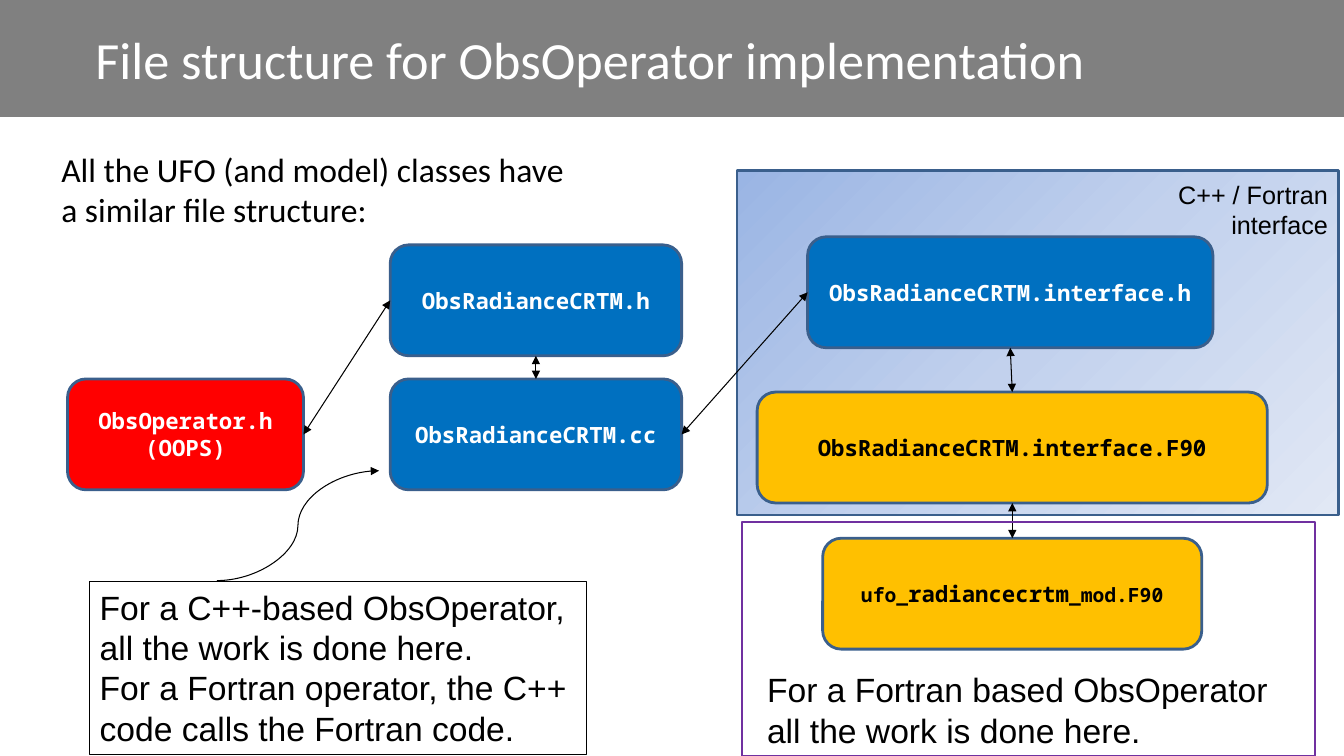
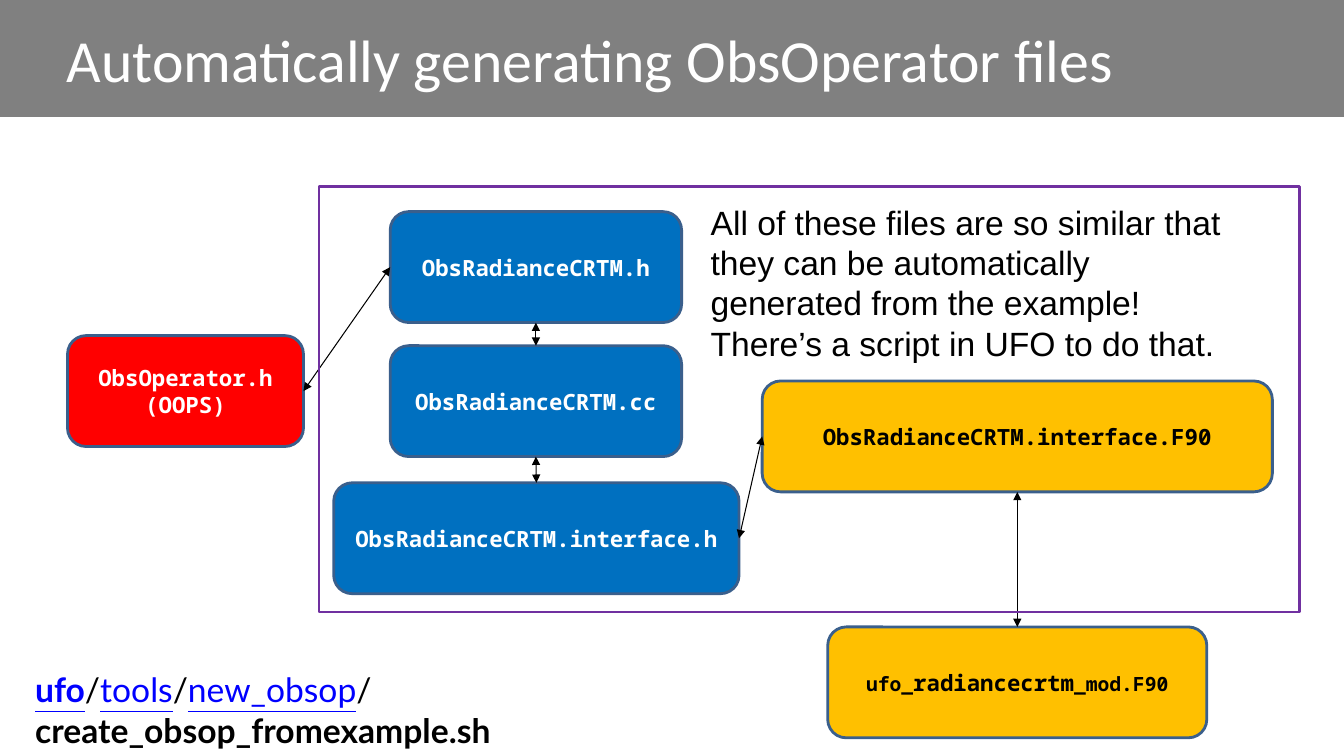
import copy
import dataclasses
import typing

import pptx
import pptx.dml.color
import pptx.enum.shapes
import pptx.enum.text
import pptx.oxml.ns
import pptx.slide
import pptx.util
from pptx.util import Inches

Align = pptx.enum.text.PP_ALIGN
Anchor = pptx.enum.text.MSO_ANCHOR
Preset = pptx.enum.shapes.MSO_SHAPE
Connector = pptx.enum.shapes.MSO_CONNECTOR
TOP, LEFT, BOTTOM, RIGHT = range(4)


@dataclasses.dataclass(frozen=True)
class Theme:
    band: str = "808080"
    white: str = "FFFFFF"
    black: str = "000000"
    blue: str = "0070C0"
    amber: str = "FFC000"
    red: str = "FF0000"
    outline: str = "3A5F8C"
    frame: str = "7030A0"
    link: str = "0000FF"
    panel: tuple[str, ...] = ("9AB5E4", "C2D1ED", "E1E8F5")
    title_font: str = "Calibri"
    code_font: str = "Noto Sans Mono"
    note_font: str = "Arial"
    path_font: str = "Lato"
    note_size: float = 24
    label_size: float = 18
    code_size: float = 16
    small_code_size: float = 14
    box_line: float = 2
    frame_line: float = 1.5
    thin_line: float = 0.75


THEME = Theme()


@dataclasses.dataclass(frozen=True)
class Run:
    text: str
    size: float = THEME.note_size
    font: str = THEME.note_font
    color: str = THEME.black
    bold: bool = False
    underline: bool = False


Paragraphs = tuple[tuple[Run, ...], ...]


@dataclasses.dataclass(frozen=True)
class Area:
    left: float
    top: float
    width: float
    height: float

    def lengths(self) -> tuple[int, ...]:
        return tuple(Inches(value) for value in dataclasses.astuple(self))


@dataclasses.dataclass(frozen=True)
class FileKind:
    paragraphs: Paragraphs
    width: float
    fill: str


@dataclasses.dataclass(frozen=True)
class FileBox:
    kind: str
    left: float
    top: float


@dataclasses.dataclass(frozen=True)
class Link:
    start: str
    start_side: int
    end: str
    end_side: int


def code(text: str, color: str = THEME.white, size: float = THEME.code_size) -> Run:
    return Run(text, size, THEME.code_font, color, bold=True)


def path_part(text: str, bold: bool = False, linked: bool = False) -> Run:
    color = THEME.link if linked else THEME.black
    return Run(text, font=THEME.path_font, color=color, bold=bold, underline=linked)


BOX_HEIGHT = 1.1
FILE_KINDS = {
    "operator": FileKind(((code("ObsOperator.h"),), (code("(OOPS)"),)), 2.34, THEME.red),
    "header": FileKind(((code("ObsRadianceCRTM.h"),),), 2.89, THEME.blue),
    "source": FileKind(((code("ObsRadianceCRTM.cc"),),), 2.89, THEME.blue),
    "interface_header": FileKind(((code("ObsRadianceCRTM.interface.h"),),), 4.02, THEME.blue),
    "interface_fortran": FileKind(
        ((code("ObsRadianceCRTM.interface.F90", THEME.black),),), 5.06, THEME.amber),
    "module": FileKind(
        ((code("ufo_", THEME.black, THEME.small_code_size),
          code("radiancecrtm", THEME.black),
          code("_mod.F90", THEME.black, THEME.small_code_size)),), 3.76, THEME.amber),
}
SHARED_LINKS = (
    Link("header", LEFT, "operator", RIGHT),
    Link("header", BOTTOM, "source", TOP),
    Link("interface_fortran", BOTTOM, "module", TOP),
)


def rgb(color: str) -> pptx.dml.color.RGBColor:
    return pptx.dml.color.RGBColor.from_string(color)


def write_text(shape: typing.Any, paragraphs: Paragraphs, align: Align = Align.LEFT,
               anchor: Anchor = Anchor.TOP, wrap: bool = True) -> None:
    frame = shape.text_frame
    frame.word_wrap = wrap
    frame.vertical_anchor = anchor
    for index, parts in enumerate(paragraphs):
        paragraph = frame.add_paragraph() if index else frame.paragraphs[0]
        paragraph.alignment = align
        for part in parts:
            if part.text == "\n":
                paragraph.add_line_break()
                continue
            run = paragraph.add_run()
            run.text = part.text
            run.font.color.rgb = rgb(part.color)
            values = {"name": part.font, "size": pptx.util.Pt(part.size),
                      "bold": part.bold, "underline": part.underline}
            for name, value in values.items():
                setattr(run.font, name, value)


def add_text(slide: pptx.slide.Slide, area: Area, paragraphs: Paragraphs,
             align: Align = Align.LEFT, anchor: Anchor = Anchor.TOP,
             wrap: bool = True) -> None:
    write_text(slide.shapes.add_textbox(*area.lengths()), paragraphs, align, anchor, wrap)


def add_box(slide: pptx.slide.Slide, preset: Preset, area: Area, fill: str | None = None,
            line: str | None = None, line_width: float = THEME.box_line) -> typing.Any:
    """Add a preset shape; without a colour, its fill or line stays empty."""
    shape = slide.shapes.add_shape(preset, *area.lengths())
    shape.shadow.inherit = False
    if fill:
        shape.fill.solid()
        shape.fill.fore_color.rgb = rgb(fill)
    else:
        shape.fill.background()
    if line:
        shape.line.color.rgb = rgb(line)
        shape.line.width = pptx.util.Pt(line_width)
    else:
        shape.line.fill.background()
    return shape


def add_gradient_panel(slide: pptx.slide.Slide, area: Area) -> None:
    panel = add_box(slide, Preset.RECTANGLE, area, line=THEME.outline)
    panel.fill.gradient()
    panel.fill.gradient_angle = 315
    stops = panel.element.spPr.find(".//" + pptx.oxml.ns.qn("a:gsLst"))
    stops.insert(1, copy.deepcopy(stops[0]))
    for index, (stop, color) in enumerate(zip(panel.fill.gradient_stops, THEME.panel)):
        stop.position = index / (len(THEME.panel) - 1)
        stop.color.rgb = rgb(color)


def add_arrow(slide: pptx.slide.Slide, kind: Connector, ends: tuple[str, ...],
              points: tuple[float, ...] = (0, 0, 0, 0)) -> typing.Any:
    """Add a thin connector with a triangle at each named end."""
    arrow = slide.shapes.add_connector(kind, *(Inches(value) for value in points))
    arrow.line.color.rgb = rgb(THEME.black)
    arrow.line.width = pptx.util.Pt(THEME.thin_line)
    line = arrow.line._get_or_add_ln()
    for end in ends:
        mark = line.makeelement(pptx.oxml.ns.qn(f"a:{end}"), {"type": "triangle"})
        line.append(mark)
    properties = arrow.element.spPr
    properties.append(properties.makeelement(pptx.oxml.ns.qn("a:effectLst"), {}))
    return arrow


def add_files(slide: pptx.slide.Slide, boxes: tuple[FileBox, ...],
              links: tuple[Link, ...]) -> None:
    shapes = {}
    for box in boxes:
        kind = FILE_KINDS[box.kind]
        area = Area(box.left, box.top, kind.width, BOX_HEIGHT)
        shape = add_box(slide, Preset.ROUNDED_RECTANGLE, area, kind.fill, THEME.outline)
        write_text(shape, kind.paragraphs, Align.CENTER, Anchor.MIDDLE)
        shapes[box.kind] = shape
    for link in links:
        arrow = add_arrow(slide, Connector.STRAIGHT, ("headEnd", "tailEnd"))
        arrow.begin_connect(shapes[link.start], link.start_side)
        arrow.end_connect(shapes[link.end], link.end_side)


def add_titled_slide(presentation: typing.Any, title: str, size: float) -> pptx.slide.Slide:
    slide = presentation.slides.add_slide(presentation.slide_layouts[6])
    add_box(slide, Preset.RECTANGLE, Area(0, 0, 13.33, 1.16), THEME.band)
    add_text(slide, Area(0.19, 0, 11.33, 1.16),
             ((Run(title, size, THEME.title_font, THEME.white),),),
             Align.CENTER, Anchor.MIDDLE)
    return slide


def build_structure_slide(presentation: typing.Any) -> None:
    slide = add_titled_slide(presentation, "File structure for ObsOperator implementation", 37.3)
    add_gradient_panel(slide, Area(7.31, 1.69, 5.97, 3.42))
    add_text(slide, Area(0.51, 1.43, 5.23, 0.87),
             ((Run("All the UFO (and model) classes have a similar file structure:",
                   font=THEME.title_font),),))
    add_files(
        slide,
        (FileBox("header", 3.87, 2.43), FileBox("source", 3.87, 3.76),
         FileBox("interface_header", 8.01, 2.35), FileBox("interface_fortran", 7.51, 3.89),
         FileBox("operator", 0.67, 3.76), FileBox("module", 8.16, 5.34)),
        SHARED_LINKS + (Link("interface_header", BOTTOM, "interface_fortran", TOP),
                        Link("interface_header", LEFT, "source", RIGHT)))
    add_text(slide, Area(7.51, 6.59, 5.43, 0.91),
             ((Run("For a Fortran based ObsOperator all the work is done here."),),))
    add_box(slide, Preset.RECTANGLE, Area(7.36, 5.18, 5.68, 2.32),
            line=THEME.frame, line_width=THEME.frame_line)
    note = add_box(slide, Preset.RECTANGLE, Area(0.89, 5.77, 4.93, 1.72),
                   line=THEME.black, line_width=THEME.thin_line)
    write_text(note, (
        (Run("For a C++-based ObsOperator, all the work is done here."),),
        (Run("For a Fortran operator, the C++ code calls the Fortran code."),)))
    add_arrow(slide, Connector.CURVE, ("tailEnd",), (2.15, 5.76, 3.76, 4.67))
    add_text(slide, Area(11.52, 1.73, 1.75, 0.71),
             ((Run("C++ / Fortran interface", THEME.label_size),),), Align.RIGHT)


def build_generation_slide(presentation: typing.Any) -> None:
    slide = add_titled_slide(presentation, "Automatically generating ObsOperator files", 42.7)
    add_files(
        slide,
        (FileBox("header", 3.87, 2.1), FileBox("source", 3.87, 3.43),
         FileBox("interface_header", 3.31, 4.79), FileBox("interface_fortran", 7.56, 3.78),
         FileBox("operator", 0.67, 3.33), FileBox("module", 8.21, 6.22)),
        SHARED_LINKS + (Link("interface_header", RIGHT, "interface_fortran", LEFT),
                        Link("interface_header", TOP, "source", BOTTOM)))
    add_box(slide, Preset.RECTANGLE, Area(3.16, 1.85, 9.73, 4.22),
            line=THEME.frame, line_width=THEME.frame_line)
    add_text(slide, Area(6.95, 1.95, 5.55, 1.72),
             ((Run("All of these files are so similar that they can be automatically "
                   "generated from the example! There’s a script in UFO to do that."),),))
    slash = path_part("/")
    add_text(slide, Area(0.25, 6.59, 7.65, 0.5),
             ((path_part("ufo", bold=True, linked=True), slash,
               path_part("tools", linked=True), slash,
               path_part("new_obsop", linked=True), slash, path_part("\n"),
               path_part("create_obsop_fromexample.sh", bold=True)),), wrap=False)


def main() -> None:
    presentation = pptx.Presentation()
    presentation.slide_width = Inches(13.33)
    presentation.slide_height = Inches(7.5)
    build_structure_slide(presentation)
    build_generation_slide(presentation)
    presentation.save("out.pptx")


if __name__ == "__main__":
    main()
